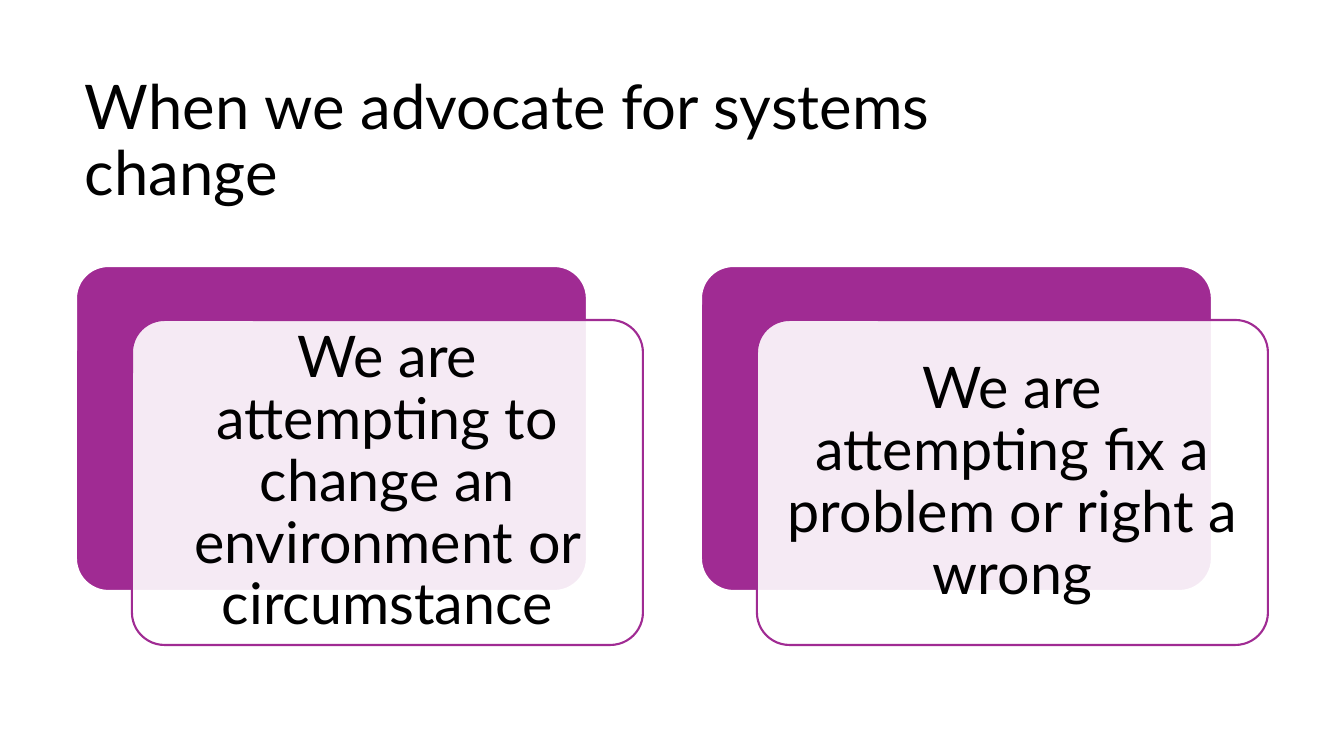
"""Build the slide on advocating for systems change: a title above two layered cards."""
from lxml import etree
from pptx import Presentation
from pptx.dml.color import RGBColor
from pptx.enum.shapes import MSO_SHAPE as SHAPE
from pptx.enum.text import MSO_ANCHOR as ANCHOR, PP_ALIGN as ALIGN
from pptx.oxml.ns import qn
from pptx.util import Pt

TITLE = "When we advocate for systems change"
REASONS = [
    "We are attempting to change an environment or circumstance",
    "We are attempting fix a problem or right a wrong",
]

PURPLE = RGBColor(0xA0, 0x2B, 0x93)
WHITE = RGBColor(0xFF, 0xFF, 0xFF)
BLACK = RGBColor(0x00, 0x00, 0x00)
FONT = "Lato"

SLIDE_W, SLIDE_H = 1344, 756
TITLE_BOX = (75, 83, 1059, 119)
CARD_X, CARD_Y, CARD_W, CARD_H = 76, 266, 511, 325
CARD_STEP = 625
PANEL_DX, PANEL_DY = 56, 54
PANEL_MARGIN = 17


def px(length):
    """Turn px into EMU."""
    return round(length * 914400 / 100.8)


def write(shape, wording, size, align):
    """Put one formatted paragraph in a shape, centred vertically."""
    frame = shape.text_frame
    frame.word_wrap = True
    frame.vertical_anchor = ANCHOR.MIDDLE
    paragraph = frame.paragraphs[0]
    paragraph.text = wording
    paragraph.alignment = align
    paragraph.line_spacing = 0.9
    font = paragraph.runs[0].font
    font.name, font.size, font.color.rgb = FONT, Pt(size), BLACK


def add_card(slide, left, top, fill, outline):
    """Add one rounded rectangle of the card size."""
    card = slide.shapes.add_shape(
        SHAPE.ROUNDED_RECTANGLE, *map(px, (left, top, CARD_W, CARD_H)))
    card.shadow.inherit = False
    card.adjustments[0] = 0.1
    card.fill.solid()
    card.fill.fore_color.rgb = fill
    card.line.color.rgb = outline
    card.line.width = Pt(1.5)
    return card


def add_reason(slide, left, reason):
    """Add a purple card with a translucent panel that holds the reason."""
    add_card(slide, left, CARD_Y, PURPLE, WHITE)
    panel = add_card(slide, left + PANEL_DX, CARD_Y + PANEL_DY, WHITE, PURPLE)
    color = panel.fill._xPr.find(qn("a:solidFill"))[0]
    etree.SubElement(color, qn("a:alpha")).set("val", "90000")
    frame = panel.text_frame
    frame.margin_left = frame.margin_right = px(PANEL_MARGIN)
    frame.margin_top = frame.margin_bottom = px(PANEL_MARGIN)
    write(panel, reason, 41, ALIGN.CENTER)


def main():
    """Build and save the slide."""
    deck = Presentation()
    deck.slide_width, deck.slide_height = px(SLIDE_W), px(SLIDE_H)
    slide = deck.slides.add_slide(deck.slide_layouts[6])
    title = slide.shapes.add_textbox(*map(px, TITLE_BOX))
    write(title, TITLE, 44, ALIGN.LEFT)
    for column, reason in enumerate(REASONS):
        add_reason(slide, CARD_X + column * CARD_STEP, reason)
    deck.save("out.pptx")


if __name__ == "__main__":
    main()
